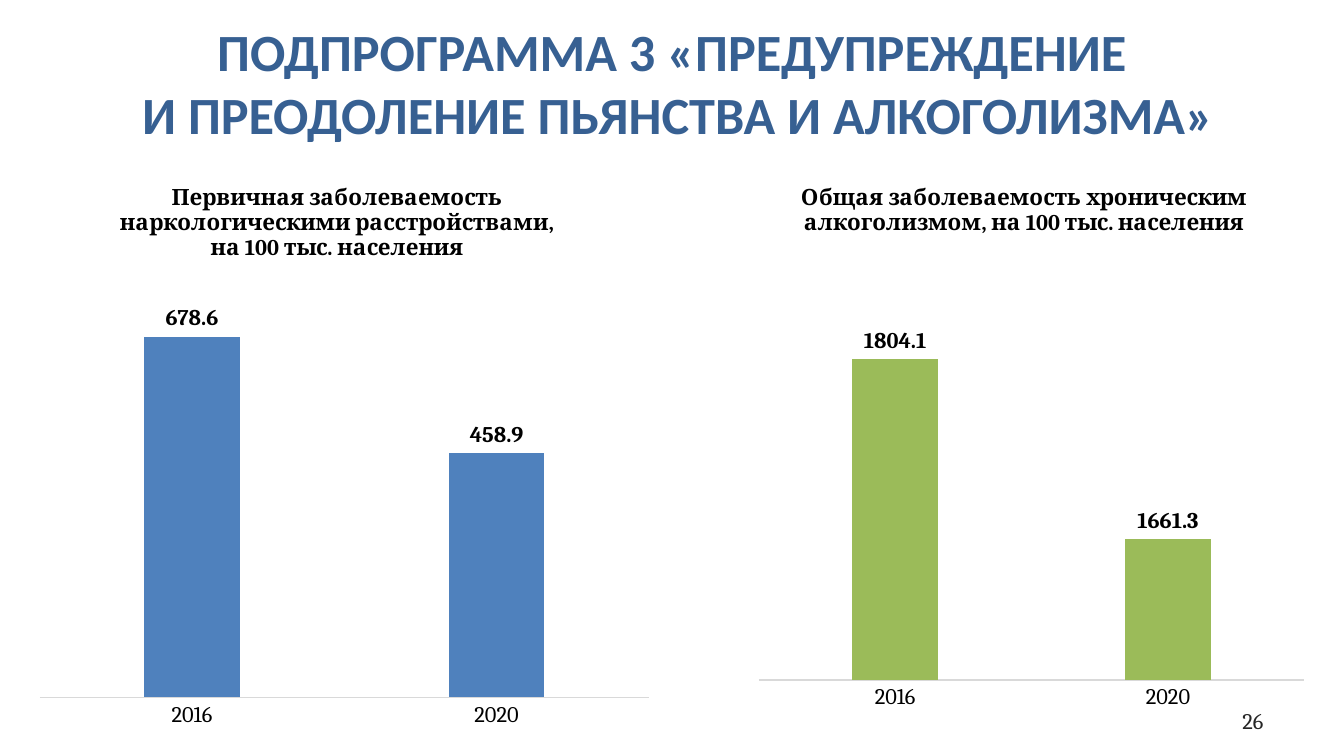
import pptx
import pptx.chart.data
import pptx.dml.color
import pptx.enum.chart
import pptx.enum.text
import pptx.util
from lxml import etree
from pptx.oxml.ns import qn

Pt = pptx.util.Pt
RGBColor = pptx.dml.color.RGBColor
PP_ALIGN = pptx.enum.text.PP_ALIGN

BLACK = RGBColor(0x00, 0x00, 0x00)
TITLE_BLUE = RGBColor(0x37, 0x60, 0x92)
BAR_BLUE = RGBColor(0x4F, 0x81, 0xBD)
BAR_GREEN = RGBColor(0x9B, 0xBB, 0x59)
AXIS_GRAY = RGBColor(0xD9, 0xD9, 0xD9)
NUMBER_GRAY = RGBColor(0x26, 0x26, 0x26)

# Content
TITLE = "ПОДПРОГРАММА 3 «ПРЕДУПРЕЖДЕНИЕ \vИ ПРЕОДОЛЕНИЕ ПЬЯНСТВА И АЛКОГОЛИЗМА»\v"
PAGE_NUMBER = "26"
YEARS = ["2016", "2020"]
CHARTS = [
    {
        "title": ["Первичная заболеваемость", "наркологическими расстройствами,",
                  "на 100 тыс. населения"],
        "values": [678.6, 458.9], "color": BAR_BLUE, "scale": (0, 800),
        "title_at": (0.14, 0.04), "plot": (0.02, 0.2, 0.96, 0.73),
    },
    {
        "title": ["Общая заболеваемость хроническим", "алкоголизмом, на 100 тыс. населения"],
        "values": [1804.1, 1661.3], "color": BAR_GREEN, "scale": (1550, 1850),
        "title_at": (0.16, 0.04), "plot": (0.1, 0.25, 0.86, 0.65),
    },
]

# Placement in points
TITLE_BOX = (28, 15, 670, 91.5)
NUMBER_BOX = (516, 375, 168, 22)
CHART_LEFT, CHART_TOP, CHART_WIDTH, CHART_HEIGHT = 14.5, 83.5, 340, 312
CHART_STEP = 358

# Text formats
TITLE_FONT = {"name": "Calibri", "size": Pt(28), "bold": True}
CHART_FONT = {"name": "Cambria", "size": Pt(10), "bold": False}
PLAIN_FONT = {"name": "Cambria", "size": Pt(12), "bold": False}
BOLD_FONT = {"name": "Cambria", "size": Pt(12), "bold": True}


def set_font(font, formats, color):
    for name, value in formats.items():
        setattr(font, name, value)
    font.color.rgb = color


def set_text(shape, box, text, alignment, formats, color):
    for name, value in zip(("left", "top", "width", "height"), box):
        setattr(shape, name, Pt(value))
    frame = shape.text_frame
    frame.text = text
    frame.word_wrap = True
    frame.auto_size = pptx.enum.text.MSO_AUTO_SIZE.NONE
    frame.vertical_anchor = pptx.enum.text.MSO_ANCHOR.MIDDLE
    paragraph = frame.paragraphs[0]
    paragraph.alignment = alignment
    set_font(paragraph.font, formats, color)
    for run in paragraph.runs:
        set_font(run.font, formats, color)


def set_layout(element, position, fractions, inner=False):
    """Place a chart element by fractions of the chart's size."""
    for old_layout in element.findall(qn("c:layout")):
        element.remove(old_layout)
    layout = etree.Element(qn("c:layout"))
    element.insert(position, layout)
    manual = etree.SubElement(layout, qn("c:manualLayout"))
    settings = [("layoutTarget", "inner")] if inner else []
    settings += [("xMode", "edge"), ("yMode", "edge")]
    settings += zip(("x", "y", "w", "h"), fractions)
    for name, value in settings:
        etree.SubElement(manual, qn("c:" + name)).set("val", str(value))


def add_bar_chart(slide, left, content):
    data = pptx.chart.data.CategoryChartData()
    data.categories = YEARS
    data.add_series("Series 1", content["values"])
    chart = slide.shapes.add_chart(
        pptx.enum.chart.XL_CHART_TYPE.COLUMN_CLUSTERED, Pt(left), Pt(CHART_TOP),
        Pt(CHART_WIDTH), Pt(CHART_HEIGHT), data).chart
    chart.has_legend = False
    set_font(chart.font, CHART_FONT, BLACK)

    # Heading
    frame = chart.chart_title.text_frame
    frame.text = "\n".join(content["title"])
    for paragraph in frame.paragraphs:
        paragraph.alignment = PP_ALIGN.CENTER
        set_font(paragraph.font, BOLD_FONT, BLACK)
        for run in paragraph.runs:
            set_font(run.font, BOLD_FONT, BLACK)

    # Axes
    axis = chart.category_axis
    axis.major_tick_mark = pptx.enum.chart.XL_TICK_MARK.NONE
    set_font(axis.tick_labels.font, PLAIN_FONT, BLACK)
    axis.format.line.color.rgb = AXIS_GRAY
    axis.format.line.width = Pt(0.75)
    value_axis = chart.value_axis
    value_axis.minimum_scale, value_axis.maximum_scale = content["scale"]
    value_axis.has_major_gridlines = False
    value_axis.visible = False

    # Bars and labels
    plot = chart.plots[0]
    plot.gap_width, plot.overlap = 219, -27
    plot.vary_by_categories = False
    fill = plot.series[0].format.fill
    fill.solid()
    fill.fore_color.rgb = content["color"]
    plot.has_data_labels = True
    labels = plot.data_labels
    labels.show_value = True
    labels.position = pptx.enum.chart.XL_LABEL_POSITION.OUTSIDE_END
    set_font(labels.font, BOLD_FONT, BLACK)

    # Heading and plot positions
    set_layout(chart.chart_title.element, 1, content["title_at"])
    set_layout(chart.element.find(".//" + qn("c:plotArea")), 0, content["plot"], inner=True)


def main():
    presentation = pptx.Presentation()
    presentation.slide_width, presentation.slide_height = Pt(720), Pt(405)
    slide = presentation.slides.add_slide(presentation.slide_layouts[5])

    set_text(slide.shapes.title, TITLE_BOX, TITLE, PP_ALIGN.CENTER, TITLE_FONT, TITLE_BLUE)
    number = slide.shapes.add_textbox(0, 0, 0, 0)
    set_text(number, NUMBER_BOX, PAGE_NUMBER, PP_ALIGN.RIGHT, PLAIN_FONT, NUMBER_GRAY)

    for index, content in enumerate(CHARTS):
        add_bar_chart(slide, CHART_LEFT + index * CHART_STEP, content)

    presentation.save("out.pptx")


if __name__ == "__main__":
    main()
